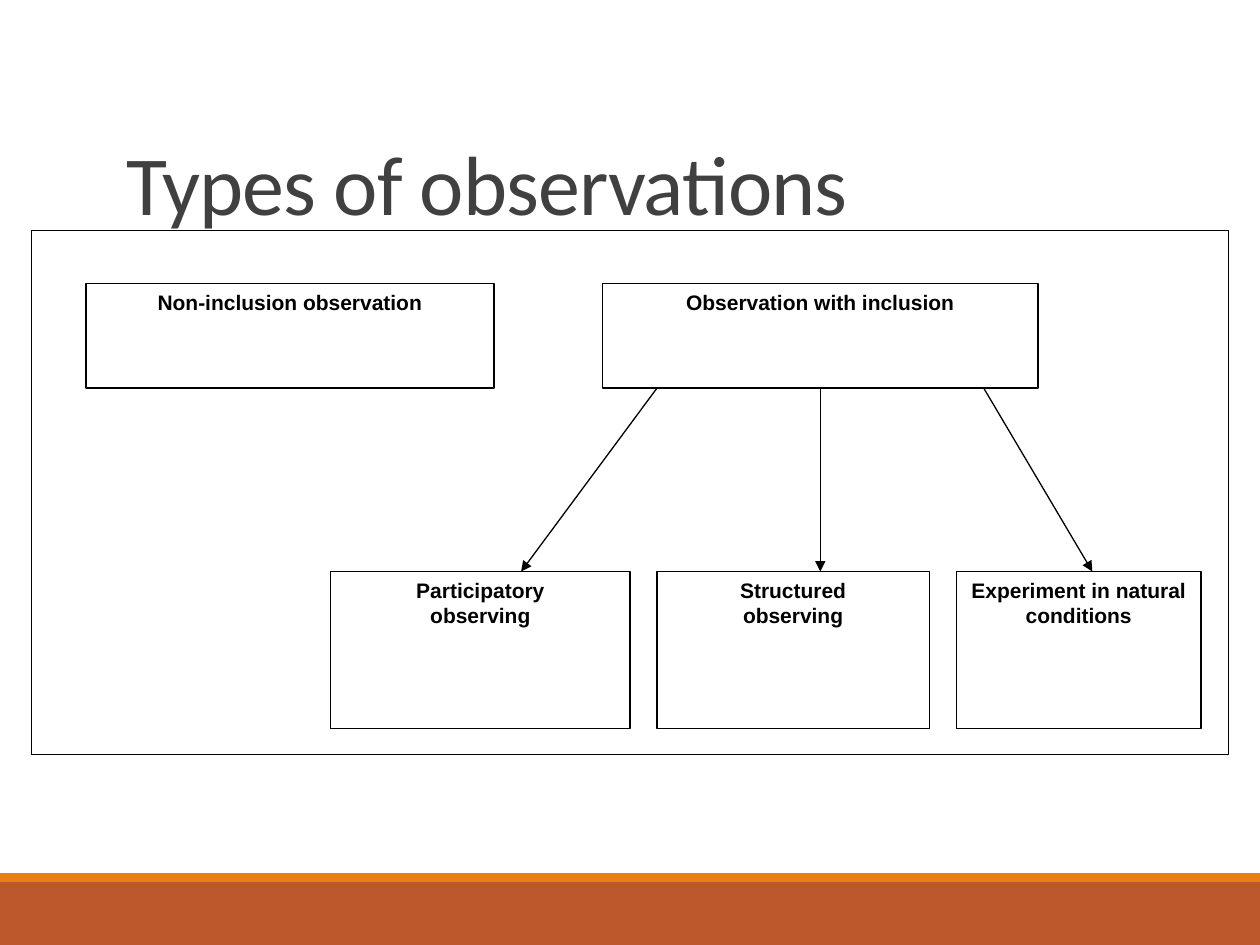
from dataclasses import dataclass

from pptx import Presentation
from pptx import util as u
from pptx.dml.color import RGBColor
from pptx.enum import shapes, text
from pptx.oxml.ns import qn
from lxml import etree

Pt = u.Pt


@dataclass(frozen=True)
class Theme:
    ink: RGBColor = RGBColor(0, 0, 0)
    paper: RGBColor = RGBColor(255, 255, 255)
    title: RGBColor = RGBColor(0x40, 0x40, 0x40)
    footer: RGBColor = RGBColor(0xBD, 0x58, 0x2C)
    accent: RGBColor = RGBColor(0xE4, 0x83, 0x12)
    title_font: str = "Calibri"
    label_font: str = "Arial"
    title_size: float = 48
    label_size: float = 12
    line_width: float = 0.75


@dataclass(frozen=True)
class Box:
    left: float
    top: float
    width: float
    height: float
    lines: tuple[str, ...] = ()

    @property
    def bottom(self) -> float:
        return self.top + self.height


@dataclass(frozen=True)
class Arrow:
    start_x: float
    end_x: float


THEME = Theme()
SLIDE_W, SLIDE_H = 720, 540

# Footer bands
FOOTER = Box(0, 504, SLIDE_W, 36)
STRIPE = Box(0, 499, SLIDE_W, 5)

# Diagram: each row shares its top and height
FRAME = Box(18, 131.8, 684, 299.4)
KIND_ROW = {"top": 161.8, "height": 59.9}
FORM_ROW = {"top": 326.6, "height": 89.8}
NON_INCLUSION = Box(49.1, width=233.2, lines=("Non-inclusion observation",), **KIND_ROW)
INCLUSION = Box(344.4, width=248.7, lines=("Observation with inclusion",), **KIND_ROW)
FORMS = (
    Box(189, width=171, lines=("Participatory", "observing"), **FORM_ROW),
    Box(375.5, width=155.5, lines=("Structured", "observing"), **FORM_ROW),
    Box(546.5, width=139.9, lines=("Experiment in natural conditions",), **FORM_ROW),
)
MIDDLE = INCLUSION.left + INCLUSION.width / 2
ARROWS = (Arrow(375.5, 297.8), Arrow(MIDDLE, MIDDLE), Arrow(562.1, 624.2))


def apply(target, formats: dict) -> None:
    for name, value in formats.items():
        setattr(target, name, value)


def add_title(s, wording: str) -> None:
    sp = s.shapes.title
    apply(sp, {"left": Pt(64.8), "top": Pt(22.3), "width": Pt(594), "height": Pt(114.5)})
    tf = sp.text_frame
    apply(tf, {"text": wording, "word_wrap": True,
               "vertical_anchor": text.MSO_ANCHOR.BOTTOM,
               "auto_size": text.MSO_AUTO_SIZE.NONE})
    p = tf.paragraphs[0]
    apply(p, {"alignment": text.PP_ALIGN.LEFT, "line_spacing": 0.85})
    r = p.runs[0]
    apply(r.font, {"name": THEME.title_font, "size": Pt(THEME.title_size)})
    r.font.color.rgb = THEME.title
    r.font._element.set("spc", "-50")  # tighter letters, in 1/100 pt


def add_box(s, box: Box, fill: RGBColor, outlined: bool = True):
    sp = s.shapes.add_shape(shapes.MSO_SHAPE.RECTANGLE, Pt(box.left), Pt(box.top),
                            Pt(box.width), Pt(box.height))
    sp.shadow.inherit = False
    sp.fill.solid()
    sp.fill.fore_color.rgb = fill
    if outlined:
        sp.line.color.rgb = THEME.ink
        sp.line.width = Pt(THEME.line_width)
    else:
        sp.line.fill.background()
    if box.lines:
        tf = sp.text_frame
        apply(tf, {"text": "\n".join(box.lines), "word_wrap": True,
                   "vertical_anchor": text.MSO_ANCHOR.TOP})
        for p in tf.paragraphs:
            p.alignment = text.PP_ALIGN.CENTER
            font = p.runs[0].font
            apply(font, {"name": THEME.label_font, "size": Pt(THEME.label_size), "bold": True})
            font.color.rgb = THEME.ink
    return sp


def add_arrow(s, arrow: Arrow, parent) -> None:
    line = s.shapes.add_connector(shapes.MSO_CONNECTOR.STRAIGHT,
                                  Pt(arrow.start_x), Pt(INCLUSION.bottom),
                                  Pt(arrow.end_x), Pt(FORM_ROW["top"]))
    if arrow.start_x == MIDDLE:
        line.begin_connect(parent, 2)
    line.line.color.rgb = THEME.ink
    line.line.width = Pt(THEME.line_width)
    etree.SubElement(line.line._get_or_add_ln(), qn("a:tailEnd"), type="triangle")
    etree.SubElement(line._element.spPr, qn("a:effectLst"))


def main() -> None:
    prs = Presentation()
    apply(prs, {"slide_width": Pt(SLIDE_W), "slide_height": Pt(SLIDE_H)})
    s = prs.slides.add_slide(prs.slide_layouts.get_by_name("Title Only"))

    # Title and footer
    add_title(s, "Types of observations")
    add_box(s, FOOTER, THEME.footer, outlined=False)
    add_box(s, STRIPE, THEME.accent, outlined=False)

    # Diagram boxes
    for box in (FRAME, NON_INCLUSION, *FORMS):
        add_box(s, box, THEME.paper)
    inclusion = add_box(s, INCLUSION, THEME.paper)

    # Arrows from inclusion to its forms
    for arrow in ARROWS:
        add_arrow(s, arrow, inclusion)

    prs.save("out.pptx")


if __name__ == "__main__":
    main()
